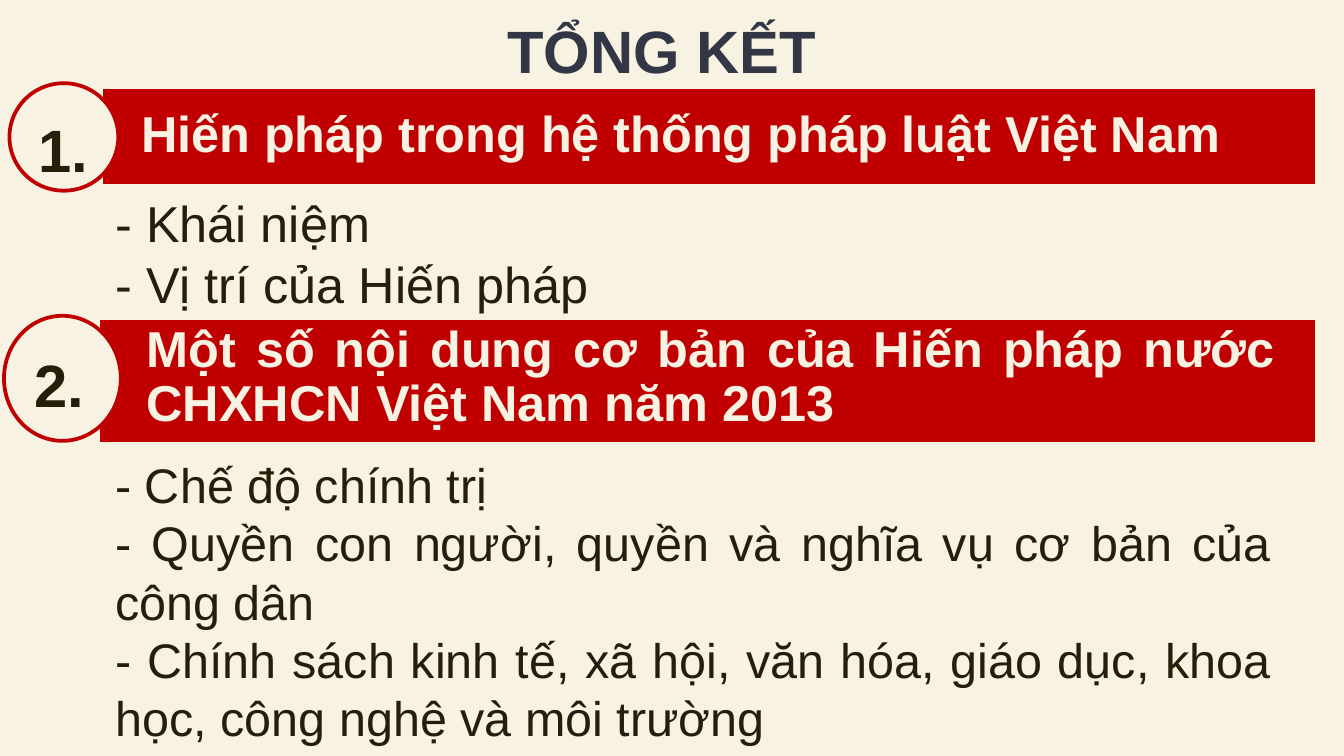
from dataclasses import dataclass

import pptx
import pptx.dml.color
import pptx.enum.shapes
import pptx.enum.text
import pptx.util

Pt = pptx.util.Pt
RGB = pptx.dml.color.RGBColor.from_string
Align = pptx.enum.text.PP_ALIGN
Anchor = pptx.enum.text.MSO_ANCHOR
Preset = pptx.enum.shapes.MSO_SHAPE


@dataclass(frozen=True)
class Theme:
    font: str = "Arial"
    cream: str = "F7F2E2"
    red: str = "C00000"
    ink: str = "251F0A"
    slate: str = "333644"
    title_size: float = 32
    number_size: float = 32
    heading_size: float = 27
    outline: float = 2


THEME = Theme()

SECTIONS = [
    {
        "number": "1.",
        "badge": (5.04, 44.6, 58.3, 57.6),
        "band": (54, 46.8, 651.6, 52.6),
        "heading": "Hiến pháp trong hệ thống pháp luật Việt Nam",
        "heading_box": (33.1, 46.8, 651.6, 52.6),
        "heading_align": Align.LEFT,
        "points": ["- Khái niệm", "- Vị trí của Hiến pháp"],
        "points_box": (54.7, 99.4, 618.5, 72),
        "points_size": 27,
    },
    {
        "number": "2.",
        "badge": (2.16, 169.2, 62.6, 67),
        "band": (52.6, 170.6, 653, 67),
        "heading": "Một số nội dung cơ bản của Hiến pháp nước CHXHCN Việt Nam năm 2013",
        "heading_box": (36, 169.2, 653, 67),
        "heading_align": Align.JUSTIFY,
        "points": [
            "- Chế độ chính trị",
            "- Quyền con người, quyền và nghĩa vụ cơ bản của công dân",
            "- Chính sách kinh tế, xã hội, văn hóa, giáo dục, khoa học, công nghệ và môi trường",
        ],
        "points_box": (54.7, 253.4, 634.3, 136.8),
        "points_size": 26,
    },
]


def write(shape, lines, size, color, bold=False, align=Align.LEFT,
          anchor=Anchor.TOP, insets=(7.2, 7.2, 7.2, 7.2), spacing=None):
    """Fill a shape with one paragraph per line; insets are left, top, right, bottom."""
    frame = shape.text_frame
    frame.word_wrap = True
    frame.vertical_anchor = anchor
    (frame.margin_left, frame.margin_top,
     frame.margin_right, frame.margin_bottom) = map(Pt, insets)
    frame.text = "\n".join(lines)
    for paragraph in frame.paragraphs:
        paragraph.alignment = align
        if spacing:
            paragraph.line_spacing = spacing
        for run in paragraph.runs:
            run.font.name = THEME.font
            run.font.size = Pt(size)
            run.font.bold = bold
            run.font.color.rgb = RGB(color)


def add_text(slide, box, lines, size, color, **layout):
    write(slide.shapes.add_textbox(*map(Pt, box)), lines, size, color, **layout)


def add_panel(slide, preset, box, fill, line):
    panel = slide.shapes.add_shape(preset, *map(Pt, box))
    panel.shadow.inherit = False
    panel.fill.solid()
    panel.fill.fore_color.rgb = RGB(fill)
    panel.line.color.rgb = RGB(line)
    panel.line.width = Pt(THEME.outline)
    return panel


def add_section(slide, section):
    add_panel(slide, Preset.RECTANGLE, section["band"], THEME.red, THEME.cream)
    add_text(slide, section["heading_box"], [section["heading"]],
             THEME.heading_size, THEME.cream, bold=True,
             align=section["heading_align"], anchor=Anchor.MIDDLE,
             insets=(42.5, 5.8, 5.8, 5.8), spacing=0.9)
    badge = add_panel(slide, Preset.OVAL, section["badge"], THEME.cream, THEME.red)
    write(badge, [section["number"]], THEME.number_size, THEME.ink, bold=True,
          insets=(7.2, 7.2, 0, 0))
    add_text(slide, section["points_box"], section["points"],
             section["points_size"], THEME.ink, align=Align.JUSTIFY,
             anchor=Anchor.MIDDLE, insets=(7.2, 3.6, 7.2, 3.6))


def main():
    deck = pptx.Presentation()
    deck.slide_width, deck.slide_height = Pt(720), Pt(405)
    slide = deck.slides.add_slide(deck.slide_layouts[6])
    slide.background.fill.solid()
    slide.background.fill.fore_color.rgb = RGB(THEME.cream)

    add_text(slide, (89.3, 0, 530.6, 41.8), ["TỔNG KẾT"],
             THEME.title_size, THEME.slate, bold=True, align=Align.CENTER)
    for section in SECTIONS:
        add_section(slide, section)
    deck.save("out.pptx")


if __name__ == "__main__":
    main()
